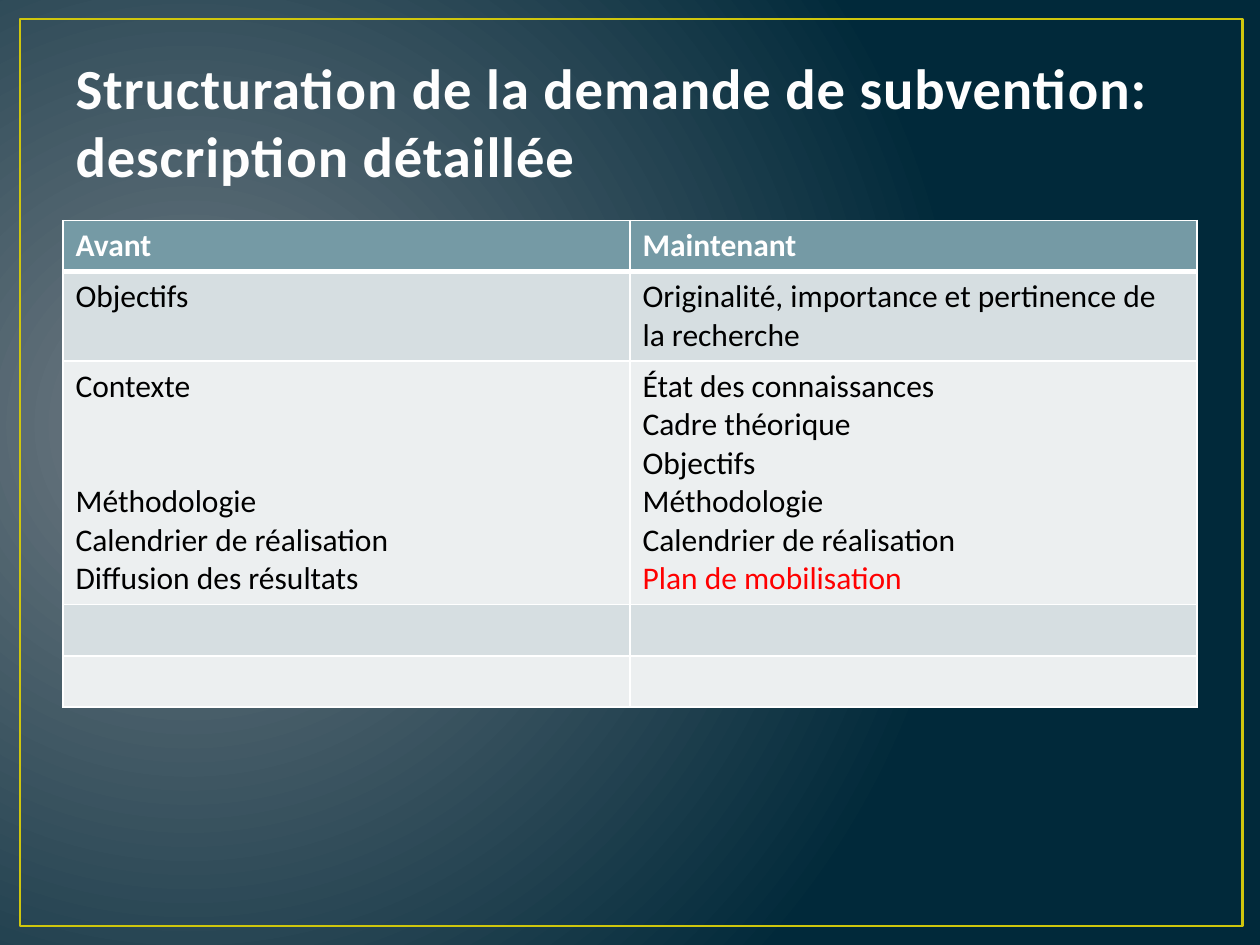
from pptx import Presentation
from pptx.dml.color import RGBColor
from pptx.enum.shapes import MSO_SHAPE
from pptx.enum.text import MSO_ANCHOR, PP_ALIGN
from pptx.oxml.ns import qn
from pptx.util import Pt
from lxml.etree import SubElement


def color(hex_string):
    return RGBColor.from_string(hex_string)


def format_font(font, hex_string, **values):
    font.color.rgb = color(hex_string)
    for name, value in values.items():
        setattr(font, name, value)


presentation = Presentation()
presentation.slide_width, presentation.slide_height = Pt(720), Pt(540)
slide = presentation.slides.add_slide(presentation.slide_layouts[5])

# Background: radial gradient centred near the left edge
background_fill = slide.background.fill
background_fill.gradient()
stops = [("717C84", 0), ("01293A", 1)]
for stop, (stop_color, position) in zip(background_fill.gradient_stops, stops):
    stop.color.rgb = color(stop_color)
    stop.position = position
gradient = slide.element.find(".//" + qn("a:gradFill"))
gradient.remove(gradient.find(qn("a:lin")))
circle = SubElement(gradient, qn("a:path"), {"path": "circle"})
SubElement(circle, qn("a:fillToRect"), {"l": "15000", "t": "50000", "r": "85000", "b": "60000"})

# Frame, behind the title
frame = slide.shapes.add_shape(MSO_SHAPE.RECTANGLE, Pt(11.5), Pt(10.8), Pt(698.4), Pt(518.4))
frame.shadow.inherit = False
frame.fill.background()
frame.line.color.rgb = color("CFC60D")
frame.line.width = Pt(1.5)
slide.shapes.title.element.addprevious(frame.element)

# Title
title = slide.shapes.title
title.left, title.top, title.width, title.height = Pt(36), Pt(21.6), Pt(648), Pt(90)
title.text_frame.text = "Structuration de la demande de subvention:\vdescription détaillée"
title.text_frame.vertical_anchor = MSO_ANCHOR.BOTTOM
paragraph = title.text_frame.paragraphs[0]
paragraph.alignment = PP_ALIGN.LEFT
for run in paragraph.runs:
    format_font(run.font, "FEFEFE", name="Calibri", size=Pt(32.4), bold=True)
    run.font._element.set("spc", "50")

# Table
rows = [
    (["Avant"], ["Maintenant"]),
    (["Objectifs"], ["Originalité, importance et pertinence de la recherche"]),
    (
        ["Contexte", "Méthodologie", "Calendrier de réalisation", "Diffusion des résultats"],
        ["État des connaissances", "Cadre théorique", "Objectifs", "Méthodologie",
         "Calendrier de réalisation", "Plan de mobilisation"],
    ),
    ([], []),
    ([], []),
]
row_heights = [29.2, 51.2, 139.2, 29.2, 29.2]
row_fills = ["759AA5", "D6DEE1", "ECEFF0", "D6DEE1", "ECEFF0"]
table = slide.shapes.add_table(
    len(rows), 2, Pt(36), Pt(126), Pt(648), Pt(sum(row_heights))).table

for row_index, row in enumerate(rows):
    table.rows[row_index].height = Pt(row_heights[row_index])
    thick_side = {0: "lnB", 1: "lnT"}.get(row_index)
    for column_index, lines in enumerate(row):
        cell = table.cell(row_index, column_index)
        properties = cell._tc.get_or_add_tcPr()
        for side in ("lnL", "lnR", "lnT", "lnB"):
            width = Pt(3 if side == thick_side else 1)
            border = SubElement(properties, qn("a:" + side), {"w": str(width)})
            border_fill = SubElement(border, qn("a:solidFill"))
            SubElement(border_fill, qn("a:srgbClr"), {"val": "FFFFFF"})
        cell.fill.solid()
        cell.fill.fore_color.rgb = color(row_fills[row_index])
        cell.text = "\n".join(lines)
        for paragraph in cell.text_frame.paragraphs:
            text_color = "FFFFFF" if row_index == 0 else "000000"
            if paragraph.text == "Plan de mobilisation":
                text_color = "FF0000"
            for run in paragraph.runs:
                format_font(run.font, text_color, name="Calibri", size=Pt(18), bold=row_index == 0)

# Two lines of space bring "Méthodologie" level in both columns
table.cell(2, 0).text_frame.paragraphs[1].space_before = Pt(44)

presentation.save("out.pptx")
